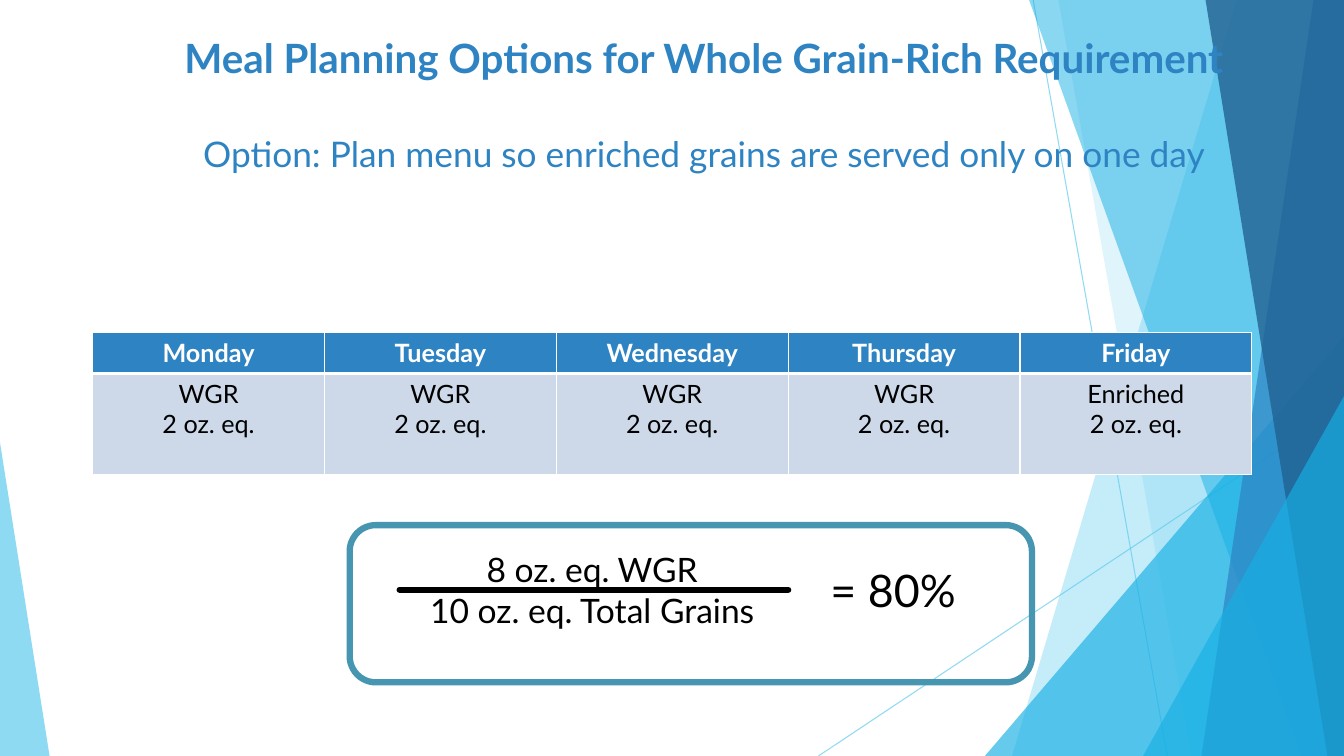
from dataclasses import dataclass

from pptx import Presentation
from pptx.dml.color import RGBColor
from pptx.enum.shapes import MSO_CONNECTOR, MSO_SHAPE
from pptx.enum.text import PP_ALIGN
from pptx.oxml.ns import qn
from pptx.util import Pt
from lxml.etree import SubElement


@dataclass(frozen=True)
class Theme:
    font: str = "Lato"
    white: str = "FFFFFF"
    black: str = "000000"
    sky: str = "5FCBEF"
    cyan: str = "17B0E4"
    blue: str = "2E83C3"
    navy: str = "226292"
    cell: str = "CDD9E9"
    frame: str = "4696B1"
    title_size: float = 28.8
    subtitle_size: float = 25.2
    table_size: float = 18
    fraction_size: float = 24
    result_size: float = 32


THEME = Theme()
WIDTH, HEIGHT = 960, 540
TITLE = "Meal Planning Options for Whole Grain-Rich Requirement"
SUBTITLE = "Option: Plan menu so enriched grains are served only on one day"
MENU = [("Monday", "WGR"), ("Tuesday", "WGR"), ("Wednesday", "WGR"),
        ("Thursday", "WGR"), ("Friday", "Enriched")]
SERVING = "2 oz. eq."
FRACTION = ["8 oz. eq. WGR", "10 oz. eq. Total Grains"]
RESULT = "= 80%"

RAYS = [((738, 0), (833.8, HEIGHT)), ((WIDTH, 290.2), (584.6, HEIGHT))]
# Bands reach the right edge: colour, opacity, left x at the top, left x at the bottom.
# Wedges stand on the bottom edge: colour, opacity, left, top, width, apex (0 left, 1 right).
DECORATION = [
    ("band", THEME.sky, 36, 883.4, 722.9),
    ("band", THEME.sky, 20, 756, 851),
    ("wedge", THEME.cyan, 66, 703.5, 240, 256.5, 1),
    ("band", THEME.cyan, 50, 735.1, 929.5),
    ("band", THEME.blue, 70, 938.2, 858.2),
    ("band", THEME.navy, 80, 861.1, 948.2),
    ("wedge", THEME.cyan, 66, 816.5, 283, 143.5, 1),
    ("wedge", THEME.sky, 70, 0, 316.2, 35.4, 0),
]


def rgb(colour):
    return RGBColor.from_string(colour)


def set_opacity(fill_parent, percent):
    colour = next(fill_parent.iter(qn("a:srgbClr")))
    SubElement(colour, qn("a:alpha")).set("val", str(percent * 1000))


def paint(shape, colour, opacity):
    shape.shadow.inherit = False
    shape.fill.solid()
    shape.fill.fore_color.rgb = rgb(colour)
    set_opacity(shape.fill._xPr, opacity)
    shape.line.fill.background()


def add_line(page, start, end, colour, width):
    line = page.shapes.add_connector(MSO_CONNECTOR.STRAIGHT, *map(Pt, start + end))
    line.line.color.rgb = rgb(colour)
    line.line.width = Pt(width)
    SubElement(line._element.spPr, qn("a:effectLst"))
    return line


def add_band(page, top_x, bottom_x):
    corners = [(top_x, 0), (WIDTH, 0), (WIDTH, HEIGHT), (bottom_x, HEIGHT)]
    start, *rest = [(Pt(x), Pt(y)) for x, y in corners]
    builder = page.shapes.build_freeform(*start, scale=1.0)
    builder.add_line_segments(rest, close=True)
    return builder.convert_to_shape()


def add_wedge(page, left, top, width, apex):
    wedge = page.shapes.add_shape(MSO_SHAPE.ISOSCELES_TRIANGLE, Pt(left), Pt(top),
                                  Pt(width), Pt(HEIGHT - top))
    wedge.adjustments[0] = apex
    return wedge


def write(frame, lines, align=PP_ALIGN.CENTER):
    """Fill a text frame with (text, size, colour, bold) lines."""
    frame.word_wrap = True
    for index, (text, size, colour, bold) in enumerate(lines):
        para = frame.add_paragraph() if index else frame.paragraphs[0]
        para.text = text
        para.alignment = align
        para.font.name = THEME.font
        para.font.size = Pt(size)
        para.font.bold = bold
        para.font.color.rgb = rgb(colour)


def add_text(page, place, lines, align=PP_ALIGN.CENTER):
    box = page.shapes.add_textbox(*map(Pt, place))
    write(box.text_frame, lines, align)
    return box


def set_borders(cell, widths):
    """Draw white cell edges, in the order left, right, top, bottom."""
    properties = cell._tc.get_or_add_tcPr()
    for position, (edge, width) in enumerate(zip("LRTB", widths)):
        line = properties.makeelement(qn(f"a:ln{edge}"), {"w": str(Pt(width))})
        fill = SubElement(line, qn("a:solidFill"))
        SubElement(fill, qn("a:srgbClr")).set("val", THEME.white)
        properties.insert(position, line)


def fill_cell(cell, lines, colour, borders):
    write(cell.text_frame, lines)
    cell.fill.solid()
    cell.fill.fore_color.rgb = rgb(colour)
    set_borders(cell, borders)


def add_menu(page):
    header_height, body_height, column_width = 29.2, 72, 165.6
    table = page.shapes.add_table(2, len(MENU), Pt(66.2), Pt(237.6),
                                  Pt(column_width * len(MENU)),
                                  Pt(header_height + body_height)).table
    table.rows[0].height, table.rows[1].height = Pt(header_height), Pt(body_height)
    size = THEME.table_size
    for column, (day, grain) in enumerate(MENU):
        table.columns[column].width = Pt(column_width)
        fill_cell(table.cell(0, column), [(day, size, THEME.white, True)],
                  THEME.blue, (1, 1, 1, 3))
        fill_cell(table.cell(1, column),
                  [(text, size, THEME.black, False) for text in (grain, SERVING)],
                  THEME.cell, (1, 1, 3, 1))


def add_calculation(page):
    frame = page.shapes.add_shape(MSO_SHAPE.ROUNDED_RECTANGLE,
                                  Pt(249.8), Pt(375.1), Pt(487.4), Pt(112.3))
    frame.shadow.inherit = False
    frame.fill.background()
    frame.line.color.rgb = rgb(THEME.frame)
    frame.line.width = Pt(4.5)
    add_text(page, (292.3, 388.8, 261.4, 65.5),
             [(text, THEME.fraction_size, THEME.black, False) for text in FRACTION])
    bar = add_line(page, (285.5, 421.2), (563, 421.2), THEME.black, 4.5)
    bar.line._get_or_add_ln().set("cap", "rnd")
    add_text(page, (586.1, 398.2, 138.2, 46.1),
             [(RESULT, THEME.result_size, THEME.black, False)], PP_ALIGN.LEFT)


def main():
    deck = Presentation()
    deck.slide_width, deck.slide_height = Pt(WIDTH), Pt(HEIGHT)
    page = deck.slides.add_slide(deck.slide_layouts[6])
    for start, end in RAYS:
        ray = add_line(page, start, end, THEME.sky, 0.75)
        set_opacity(ray.line._get_or_add_ln(), 70)
    draw = {"band": add_band, "wedge": add_wedge}
    for kind, colour, opacity, *geometry in DECORATION:
        paint(draw[kind](page, *geometry), colour, opacity)
    heading = add_text(page, (112.3, 20.2, 781.2, 175),
                       [(TITLE, THEME.title_size, THEME.blue, True),
                        (SUBTITLE, THEME.subtitle_size, THEME.blue, False)])
    heading.text_frame.paragraphs[1].space_before = Pt(36)
    add_menu(page)
    add_calculation(page)
    deck.save("out.pptx")


if __name__ == "__main__":
    main()
